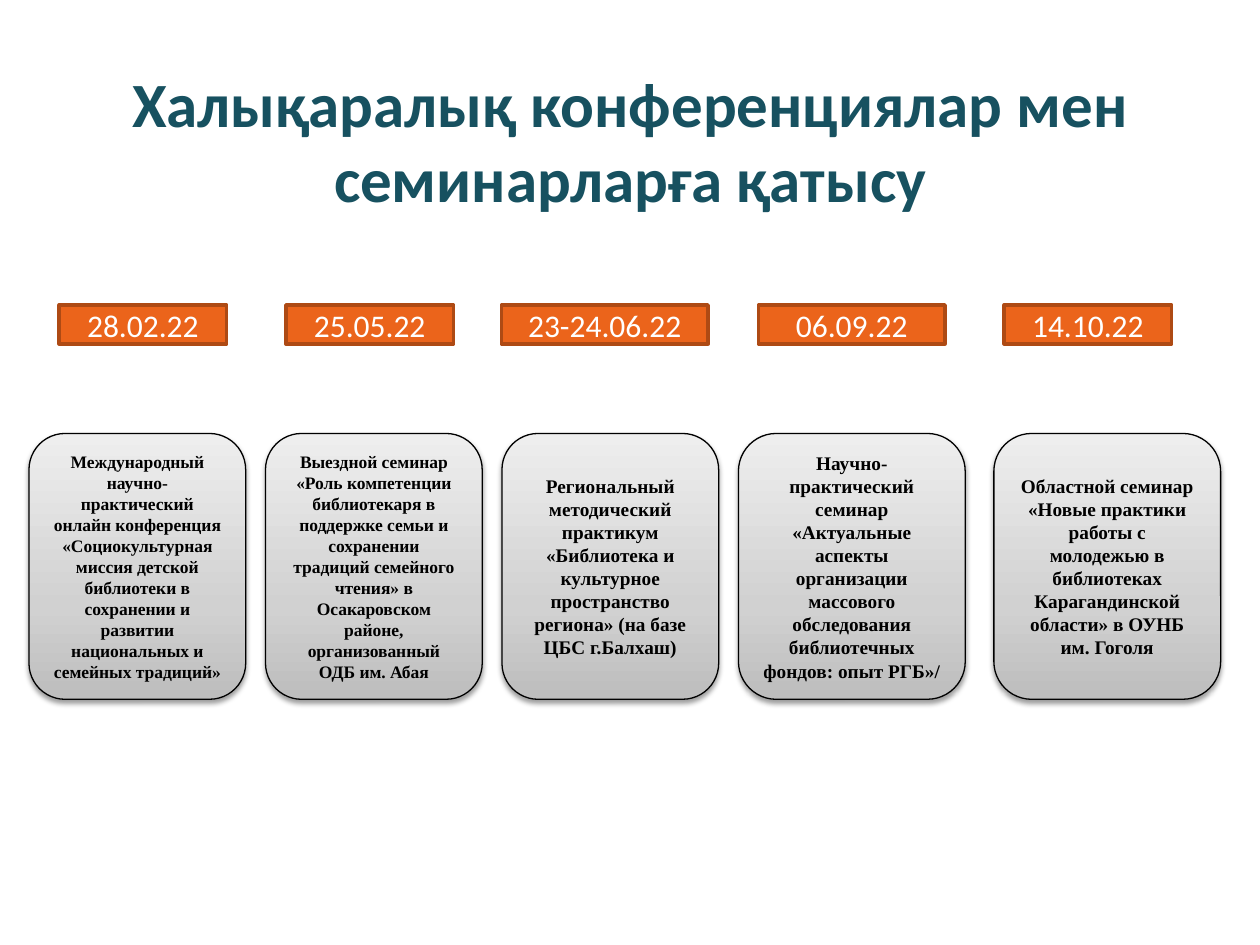
from dataclasses import dataclass

from lxml.etree import SubElement
from pptx import Presentation
from pptx.dml.color import RGBColor
from pptx.enum.shapes import MSO_SHAPE
from pptx.enum.text import MSO_ANCHOR, MSO_AUTO_SIZE, PP_ALIGN
from pptx.oxml.ns import qn
from pptx.util import Inches, Pt


@dataclass(frozen=True)
class Theme:
    sans: str = "Calibri"
    serif: str = "Times New Roman"
    teal: str = "175160"
    orange: str = "EB641B"
    rust: str = "AE4A14"
    white: str = "FFFFFF"
    black: str = "000000"
    grays: tuple = ((0, "BDBDBD"), (35, "D1D1D1"), (100, "EEEEEE"))
    head: int = 36
    date: int = 18
    small: int = 10
    body: int = 11


@dataclass(frozen=True)
class Event:
    date: str
    text: str
    size: int
    chip: tuple
    wide: float


THEME = Theme()
WIDTH, HEIGHT = Inches(10), Inches(7.5)
TITLE = "Халықаралық конференциялар мен семинарларға қатысу"
LEFT, STEP, SHIFT = 2.3, 18.77, 1.5
CHIP_ROW = (32.27, 4.13)
CARD_ROW = (45.87, 28.13)

EVENTS = (
    Event("28.02.22",
          "Международный научно-практический онлайн конференция "
          "«Социокультурная миссия детской библиотеки в сохранении и "
          "развитии национальных и семейных традиций»",
          THEME.small, (4.7, 13.3), 17.2),
    Event("25.05.22",
          "Выездной семинар «Роль компетенции библиотекаря в поддержке "
          "семьи и сохранении традиций семейного чтения» в Осакаровском "
          "районе, организованный ОДБ им. Абая",
          THEME.small, (22.7, 13.3), 17.2),
    Event("23-24.06.22",
          "Региональный методический практикум «Библиотека и культурное "
          "пространство региона» (на базе ЦБС г.Балхаш)",
          THEME.body, (39.8, 16.4), 17.2),
    Event("06.09.22",
          "Научно-практический семинар «Актуальные аспекты организации "
          "массового обследования библиотечных фондов: опыт РГБ»/",
          THEME.body, (60.2, 14.8), 18),
    Event("14.10.22",
          "Областной семинар «Новые практики работы с молодежью в "
          "библиотеках Карагандинской области» в ОУНБ им. Гоголя",
          THEME.body, (79.7, 13.3), 18),
)


def area(left, wide, row):
    top, high = row
    return (int(WIDTH * left / 100), int(HEIGHT * top / 100),
            int(WIDTH * wide / 100), int(HEIGHT * high / 100))


def write(shape, text, *, font, size, color, bold=False,
          anchor=MSO_ANCHOR.MIDDLE):
    frame = shape.text_frame
    frame.word_wrap = True
    frame.vertical_anchor = anchor
    line = frame.paragraphs[0]
    line.alignment = PP_ALIGN.CENTER
    run = line.add_run()
    run.text = text
    run.font.name = font
    run.font.size = Pt(size)
    run.font.bold = bold
    run.font.color.rgb = RGBColor.from_string(color)


def add_box(slide, kind, place, edge, weight):
    box = slide.shapes.add_shape(kind, *place)
    box.shadow.inherit = False
    box.line.color.rgb = RGBColor.from_string(edge)
    box.line.width = Pt(weight)
    return box


def shade(box):
    box.fill.gradient()
    box.fill.gradient_angle = 90
    stops = box.element.spPr.find(".//" + qn("a:gsLst"))
    stops.clear()
    for share, color in THEME.grays:
        stop = SubElement(stops, qn("a:gs"), pos=str(share * 1000))
        SubElement(stop, qn("a:srgbClr"), val=color)


def cast(box):
    effects = box.element.spPr.find(qn("a:effectLst"))
    shadow = SubElement(effects, qn("a:outerShdw"), blurRad=str(Pt(3.1)),
                        dist=str(Pt(1.6)), dir="5400000", rotWithShape="0")
    color = SubElement(shadow, qn("a:srgbClr"), val=THEME.black)
    SubElement(color, qn("a:alpha"), val="38000")


def add_title(slide):
    title = slide.shapes.title
    title.left, title.top, title.width, title.height = area(
        1.6, 96.9, (6.13, 17.47))
    write(title, TITLE, font=THEME.sans, size=THEME.head, color=THEME.teal,
          bold=True, anchor=MSO_ANCHOR.TOP)
    title.text_frame.auto_size = MSO_AUTO_SIZE.SHAPE_TO_FIT_TEXT


def add_chip(slide, event):
    chip = add_box(slide, MSO_SHAPE.RECTANGLE, area(*event.chip, CHIP_ROW),
                   THEME.rust, 2)
    chip.fill.solid()
    chip.fill.fore_color.rgb = RGBColor.from_string(THEME.orange)
    write(chip, event.date, font=THEME.sans, size=THEME.date,
          color=THEME.white)


def add_card(slide, event, col):
    left = LEFT + STEP * col
    if col == len(EVENTS) - 1:
        left += SHIFT
    card = add_box(slide, MSO_SHAPE.ROUNDED_RECTANGLE,
                   area(left, event.wide, CARD_ROW), THEME.black, 0.75)
    shade(card)
    cast(card)
    write(card, event.text, font=THEME.serif, size=event.size,
          color=THEME.black, bold=True)


def main():
    deck = Presentation()
    deck.slide_width, deck.slide_height = WIDTH, HEIGHT
    slide = deck.slides.add_slide(deck.slide_layouts.get_by_name("Title Only"))
    add_title(slide)
    for col, event in enumerate(EVENTS):
        add_chip(slide, event)
        add_card(slide, event, col)
    deck.save("out.pptx")


if __name__ == "__main__":
    main()
